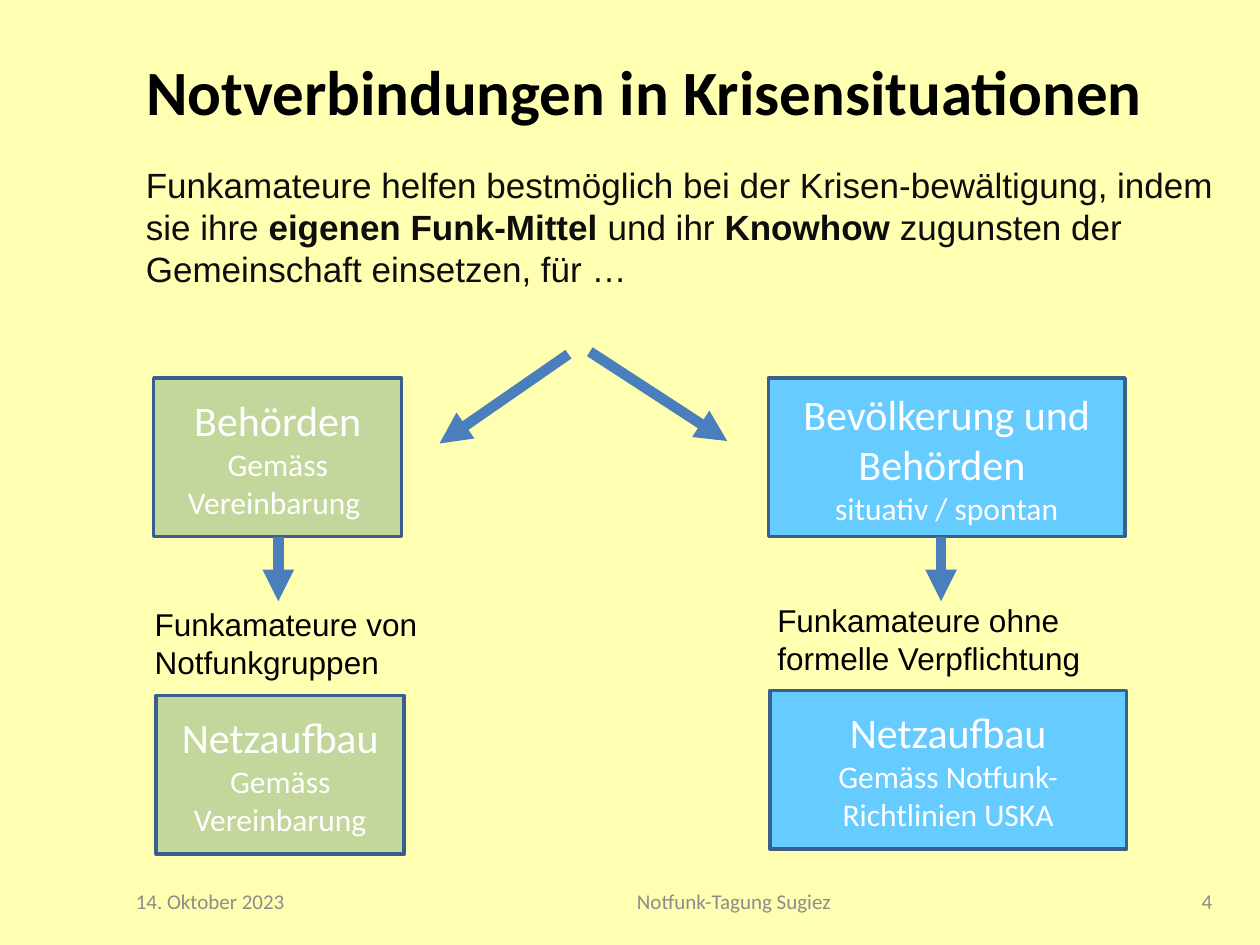
import pptx
import pptx.util
import pptx.dml.color
import pptx.enum.shapes
import pptx.enum.text
import pptx.oxml
import pptx.oxml.ns
from pptx.util import Cm

ALIGN = pptx.enum.text.PP_ALIGN
MIDDLE = pptx.enum.text.MSO_ANCHOR.MIDDLE

BACKGROUND, GREEN, BLUE = "FFFFB2", "C3D69B", "66CCFF"
BORDER, ARROW, GREY = "3A5F8C", "4B7EBC", "8C8C8C"

TITLE = "Notverbindungen in Krisensituationen"
INTRO = [  # text, bold
    ("Funkamateure helfen bestmöglich bei der Krisen-bewältigung, indem sie ihre ", False),
    ("eigenen Funk-Mittel ", True),
    ("und ihr ", False),
    ("Knowhow", True),
    (" zugunsten der Gemeinschaft einsetzen, für …", False),
]
# left, top, width, fill, heading, detail
BOXES = [
    (3.1, 7.62, 5, GREEN, "Behörden", "Gemäss Vereinbarung "),
    (15.49, 7.62, 7.19, BLUE, "Bevölkerung und Behörden ", "situativ / spontan"),
    (3.15, 14.02, 5, GREEN, "Netzaufbau", "Gemäss Vereinbarung"),
    (15.52, 13.92, 7.19, BLUE, "Netzaufbau", "Gemäss Notfunk-Richtlinien USKA"),
]
BOX_HEIGHT = 3.2
# left, top, width, text
CAPTIONS = [
    (2.87, 12.07, 8.33, "Funkamateure von Notfunkgruppen"),
    (15.42, 11.99, 7.95, "Funkamateure ohne \vformelle Verpflichtung"),
]
# from x, from y, to x, to y
ARROWS = [
    (11.46, 7.14, 8.86, 8.94),
    (11.89, 7.09, 14.66, 8.89),
    (5.61, 10.82, 5.61, 12.12),
    (18.97, 10.82, 18.97, 12.12),
]
# left, width, text, alignment
FOOTERS = [
    (2.49, 4.7, "14. Oktober 2023", ALIGN.LEFT),
    (7.9, 13.79, "Notfunk-Tagung Sugiez", ALIGN.CENTER),
    (22.3, 2.39, "4", ALIGN.RIGHT),
]


def rgb(value):
    return pptx.dml.color.RGBColor.from_string(value)


def style(p, size, name, color, align=ALIGN.LEFT):
    p.alignment = align
    p.font.size = pptx.util.Pt(size)
    p.font.name = name
    p.font.color.rgb = rgb(color)


def add_text(s, left, top, width, height):
    tf = s.shapes.add_textbox(Cm(left), Cm(top), Cm(width), Cm(height)).text_frame
    tf.word_wrap = True
    return tf


def add_box(s, left, top, width, fill, heading, detail):
    sp = s.shapes.add_shape(pptx.enum.shapes.MSO_SHAPE.RECTANGLE,
                            Cm(left), Cm(top), Cm(width), Cm(BOX_HEIGHT))
    sp.shadow.inherit = False
    sp.fill.solid()
    sp.fill.fore_color.rgb = rgb(fill)
    sp.line.color.rgb = rgb(BORDER)
    sp.line.width = pptx.util.Pt(2)
    tf = sp.text_frame
    tf.word_wrap = True
    tf.vertical_anchor = MIDDLE
    tf.text = f"{heading}\n{detail}"
    for p, size in zip(tf.paragraphs, (24, 18)):
        style(p, size, "Calibri", "FFFFFF", ALIGN.CENTER)


def add_arrow(s, x1, y1, x2, y2):
    line = s.shapes.add_connector(pptx.enum.shapes.MSO_CONNECTOR.STRAIGHT,
                                  Cm(x1), Cm(y1), Cm(x2), Cm(y2))
    line.line.color.rgb = rgb(ARROW)
    line.line.width = pptx.util.Pt(6)
    ln = line.line._get_or_add_ln()
    ln.append(pptx.oxml.parse_xml(
        f'<a:tailEnd {pptx.oxml.ns.nsdecls("a")} type="triangle"/>'))
    ln.addnext(pptx.oxml.parse_xml(f'<a:effectLst {pptx.oxml.ns.nsdecls("a")}/>'))


def main():
    prs = pptx.Presentation()
    prs.slide_width, prs.slide_height = Cm(25.4), Cm(19.05)
    s = prs.slides.add_slide(prs.slide_layouts.get_by_name("Title Only"))
    s.background.fill.solid()
    s.background.fill.fore_color.rgb = rgb(BACKGROUND)

    title = s.shapes.title
    title.left, title.top, title.width, title.height = Cm(2.69), Cm(0.48), Cm(22), Cm(2.69)
    tf = title.text_frame
    tf.text = TITLE
    tf.vertical_anchor = MIDDLE
    style(tf.paragraphs[0], 36, "Calibri", "000000")
    tf.paragraphs[0].font.bold = True

    p = add_text(s, 2.69, 3.18, 22.4, 2.82).paragraphs[0]
    style(p, 20, "Arial", "0D0D0D")
    for text, bold in INTRO:
        r = p.add_run()
        r.text = text
        r.font.bold = bold

    for box in BOXES:
        add_box(s, *box)
    for left, top, width, text in CAPTIONS:
        tf = add_text(s, left, top, width, 1.8)
        tf.text = text
        style(tf.paragraphs[0], 18, "Arial", "000000")
    for arrow in ARROWS:
        add_arrow(s, *arrow)
    for left, width, text, align in FOOTERS:
        tf = add_text(s, left, 17.65, width, 1.02)
        tf.text = text
        tf.vertical_anchor = MIDDLE
        style(tf.paragraphs[0], 12, "Calibri", GREY, align)

    prs.save("out.pptx")


if __name__ == "__main__":
    main()
